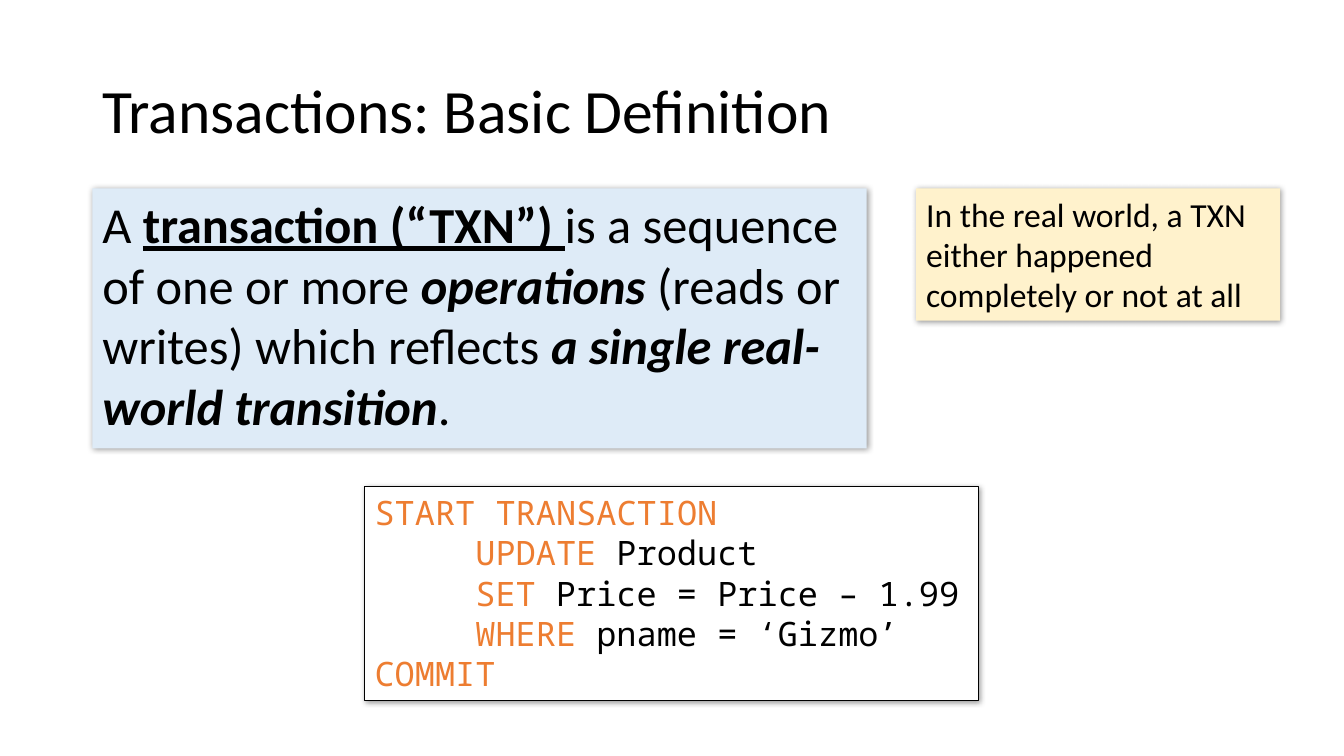
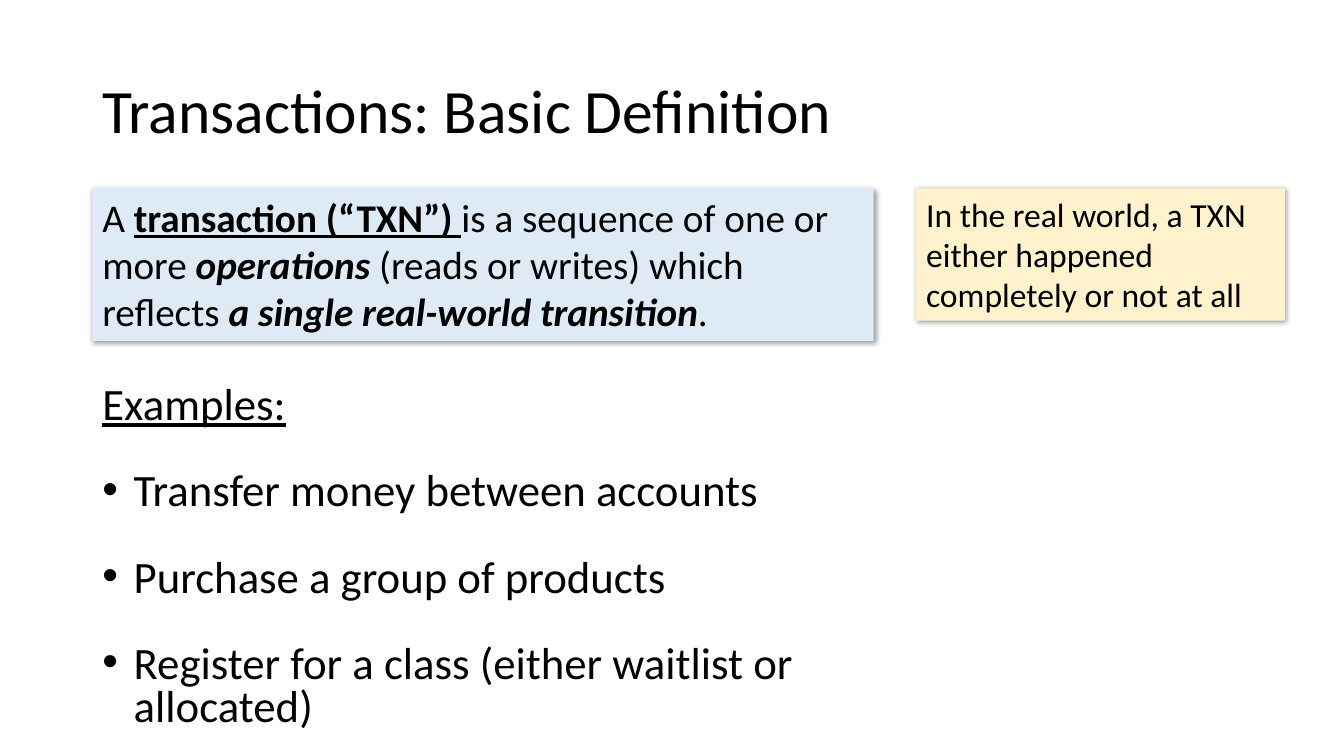
from dataclasses import dataclass
from lxml import etree
from pptx import Presentation, util as u
from pptx.dml.color import RGBColor
from pptx.enum import shapes, text
from pptx.oxml import parse_xml
from pptx.oxml.ns import nsdecls, qn


@dataclass(frozen=True)
class Theme:
    sans: str = "Calibri"
    mono: str = "Noto Sans Mono"
    ink: str = "000000"
    key: str = "ED7D31"
    blue: str = "DEEBF7"
    cream: str = "FFF2CC"
    white: str = "FFFFFF"
    head: int = 44
    lead: int = 36
    body: int = 32
    brief: int = 28
    note: int = 24
    left: float = 2.33
    top: float = 4.75
    side: float = 23.09


T = Theme()
TITLE = "Transactions: Basic Definition"
BOLD = {"bold": True}
UNDER = {"underline": True}
STRONG = {"bold": True, "italic": True}
KEY = {"color": T.key}
DEFINE = [
    ("A ", {}),
    ("transaction (“TXN”) ", BOLD | UNDER),
    ("is a sequence of one or more ", {}),
    ("operations", STRONG),
    (" (reads or writes) which reflects ", {}),
    ("a single real-world transition", STRONG),
    (".", {}),
]
NOTE = [("In the real world, a TXN either happened completely or not at all", {})]
CODE = [
    ("START TRANSACTION", "", 0),
    ("UPDATE", " Product", 1),
    ("SET", " Price = Price – 1.99", 1),
    ("WHERE", " pname = ‘Gizmo’", 1),
    ("COMMIT", "", 0),
]
CASES = [
    "Transfer money between accounts",
    "Purchase a group of products",
    "Register for a class (either waitlist or allocated)",
]


def apply(item, form):
    for name, value in form.items():
        setattr(item, name, value)


def place(shape, area):
    names = ("left", "top", "width", "height")
    apply(shape, dict(zip(names, map(u.Cm, area))))


def write(para, runs, size, face=T.sans):
    for words, form in runs:
        run = para.add_run()
        run.text = words
        form = dict(form)
        color = form.pop("color", T.ink)
        apply(run.font, {"name": face, "size": u.Pt(size)} | form)
        run.font.color.rgb = RGBColor.from_string(color)


def fill_text(frame, paras, size, face=T.sans, form=None):
    apply(frame, {"word_wrap": True, "auto_size": text.MSO_AUTO_SIZE.SHAPE_TO_FIT_TEXT,
                  "vertical_anchor": text.MSO_ANCHOR.TOP})
    for i, runs in enumerate(paras):
        para = frame.add_paragraph() if i else frame.paragraphs[0]
        apply(para, {"alignment": text.PP_ALIGN.LEFT} | (form or {}))
        write(para, runs, size, face)
    return frame.paragraphs


def indent(para, left, hang=0, mark=None):
    props = para._p.get_or_add_pPr()
    props.set("marL", str(u.Cm(left)))
    props.set("indent", str(-u.Cm(hang)))
    if mark:
        etree.SubElement(props, qn("a:buFont")).set("typeface", "Arial")
        etree.SubElement(props, qn("a:buChar")).set("char", mark)


def shade(shape):
    shape.shadow.inherit = False
    glow = parse_xml(
        f'<a:outerShdw {nsdecls("a")} blurRad="{u.Pt(4)}" dist="{u.Pt(1)}" '
        f'dir="2700000" algn="tl" rotWithShape="0"><a:srgbClr val="{T.ink}">'
        '<a:alpha val="40000"/></a:srgbClr></a:outerShdw>')
    shape._element.spPr.find(qn("a:effectLst")).append(glow)


def add_card(slide, area, color, paras, size, face=T.sans, edge=False):
    card = slide.shapes.add_shape(shapes.MSO_SHAPE.RECTANGLE, *map(u.Cm, area))
    card.fill.solid()
    card.fill.fore_color.rgb = RGBColor.from_string(color)
    if edge:
        card.line.color.rgb = RGBColor.from_string(T.ink)
        card.line.width = u.Pt(0.75)
    else:
        card.line.fill.background()
    shade(card)
    return fill_text(card.text_frame, paras, size, face)


def add_code(slide):
    rows = [[(word, KEY)] + ([(rest, {})] if rest else []) for word, rest, _ in CODE]
    paras = add_card(slide, (9.19, 12.27, 15.47, 5.38), T.white, rows, T.note, T.mono, True)
    for para, (_, _, level) in zip(paras, CODE):
        indent(para, 2.54 * level)


def add_cases(slide):
    box = slide.shapes.add_textbox(*map(u.Cm, (T.left, 9.6, 21.29, 9.02)))
    rows = [[("Examples:", UNDER)]] + [[(case, {})] for case in CASES]
    paras = fill_text(box.text_frame, rows, T.body,
                      form={"line_spacing": 0.8, "space_after": u.Pt(31)})
    paras[-1].space_after = u.Pt(0)
    for para in paras[1:]:
        indent(para, 0.79, 0.79, "•")


def add_page(deck, size, wide, high, side):
    slide = deck.slides.add_slide(deck.slide_layouts[5])
    title = slide.shapes.title
    place(title, (T.left, 1.01, 29.21, 3.68))
    fill_text(title.text_frame, [[(TITLE, {})]], T.head, form={"line_spacing": 0.9})
    apply(title.text_frame, {"auto_size": text.MSO_AUTO_SIZE.NONE,
                             "vertical_anchor": text.MSO_ANCHOR.MIDDLE})
    add_card(slide, (T.left, T.top, wide, high), T.blue, [DEFINE], size)
    add_card(slide, (T.side, T.top, side, 3.33), T.cream, [NOTE], T.note)
    return slide


def main():
    deck = Presentation()
    apply(deck, {"slide_width": u.Cm(33.87), "slide_height": u.Cm(19.05)})
    add_code(add_page(deck, T.lead, 19.51, 6.55, 9.17))
    add_cases(add_page(deck, T.brief, 19.69, 3.84, 9.3))
    deck.save("out.pptx")


if __name__ == "__main__":
    main()
